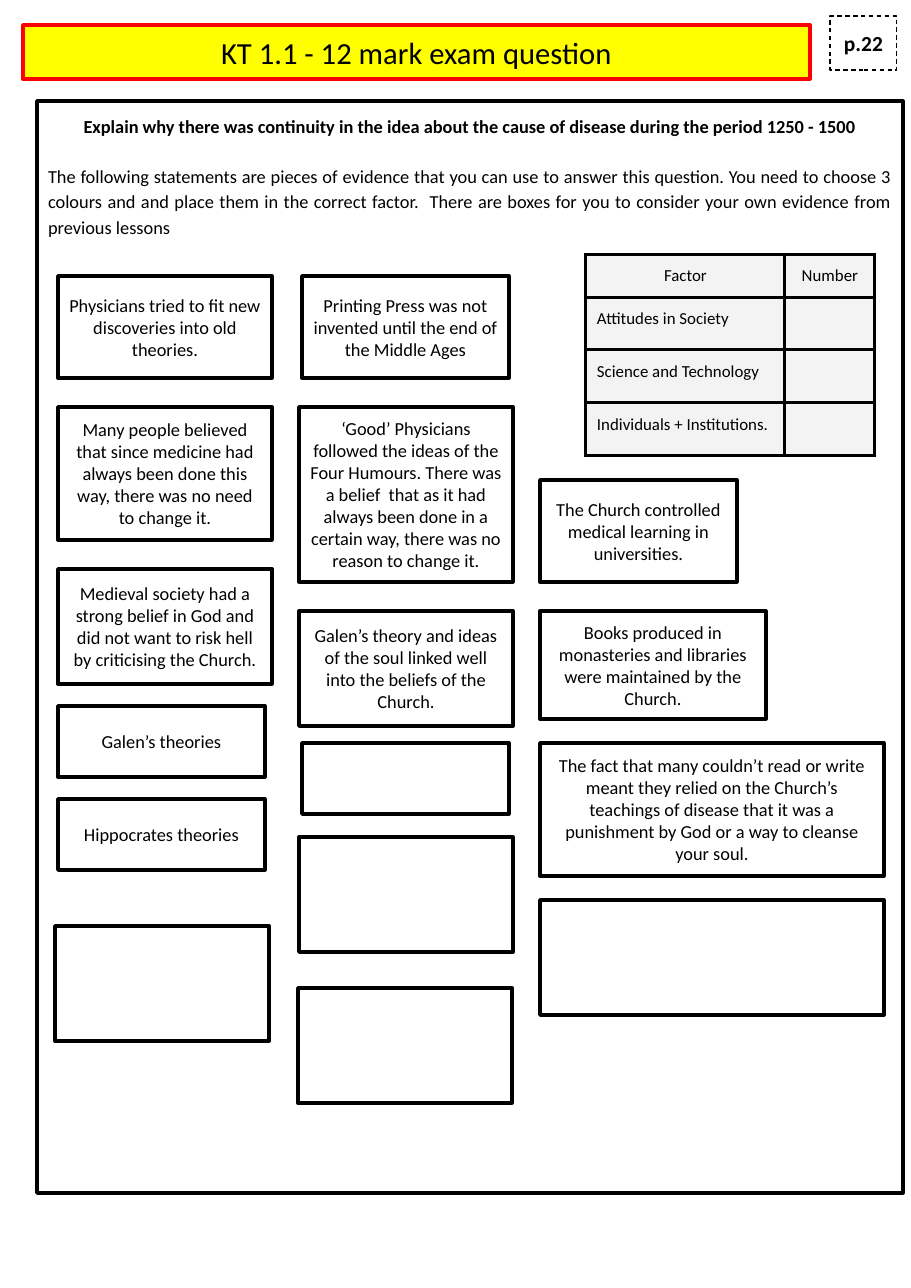
from dataclasses import dataclass

from lxml import etree
from pptx import Presentation
from pptx.dml.color import RGBColor
from pptx.enum import dml, shapes, text
from pptx.oxml import ns
from pptx.util import Pt

EMU_PER_PX = 8298
INSET = 11


@dataclass(frozen=True)
class Theme:
    font: str = "Calibri"
    ink: str = "000000"
    paper: str = "FFFFFF"
    banner: str = "FFFF00"
    banner_edge: str = "FF0000"
    cell: str = "F3F3F3"
    title_size: int = 20
    page_size: int = 14
    body_size: int = 12
    table_size: int = 11
    thick: float = 2.25
    thin: float = 0.75


THEME = Theme()
CENTER = text.PP_ALIGN.CENTER

QUESTION = ("Explain why there was continuity in the idea about the cause of disease "
            "during the period 1250 - 1500")
TASK = ("The following statements are pieces of evidence that you can use to answer this "
        "question. You need to choose 3 colours and and place them in the correct factor.  "
        "There are boxes for you to consider your own evidence from previous lessons")

# (left, top, width, height), statement; a box without a statement is for the pupil
EVIDENCE = [
    ((58, 276, 214, 102), "Physicians tried to fit new discoveries into old theories."),
    ((58, 407, 214, 133), "Many people believed that since medicine had always been done "
                          "this way, there was no need to change it."),
    ((58, 569, 214, 115), "Medieval society had a strong belief in God and did not want to "
                          "risk hell by criticising the Church."),
    ((58, 706, 207, 71), "Galen’s theories"),
    ((58, 799, 207, 71), "Hippocrates theories"),
    ((55, 926, 214, 115), ""),
    ((302, 276, 207, 102), "Printing Press was not invented until the end of the Middle Ages"),
    ((299, 407, 214, 175), "‘Good’ Physicians followed the ideas of the Four Humours. There "
                           "was a belief  that as it had always been done in a certain way, "
                           "there was no reason to change it."),
    ((299, 611, 214, 115), "Galen’s theory and ideas of the soul linked well into the "
                           "beliefs of the Church."),
    ((302, 743, 207, 71), ""),
    ((299, 837, 214, 115), ""),
    ((298, 988, 214, 115), ""),
    ((540, 480, 197, 102), "The Church controlled medical learning in universities."),
    ((540, 611, 226, 108), "Books produced in monasteries and libraries were maintained by "
                           "the Church."),
    ((540, 743, 344, 133), "The fact that many couldn’t read or write meant they relied on "
                           "the Church’s teachings of disease that it was a punishment by God "
                           "or a way to cleanse your soul."),
    ((540, 900, 344, 115), ""),
]

FACTORS = [("Factor", "Number"), ("Attitudes in Society", ""),
           ("Science and Technology", ""), ("Individuals + Institutions.", "")]
TABLE_ORIGIN = (586, 254)
COLUMN_WIDTHS = (199, 90)
ROW_HEIGHTS = (43, 53, 53, 53)


def px(length):
    return length * EMU_PER_PX


def apply(target, values):
    for name, value in values.items():
        setattr(target, name, value)


def write(paragraph, words, size, bold=False, **layout):
    apply(paragraph, layout)
    run = paragraph.add_run()
    run.text = words
    apply(run.font, {"name": THEME.font, "size": Pt(size), "bold": bold})
    run.font.color.rgb = RGBColor.from_string(THEME.ink)


def set_margins(target):
    sides = ("left", "top", "right", "bottom")
    apply(target, {f"margin_{side}": px(INSET) for side in sides})


def add_box(slide, area, fill=None, edge=THEME.ink, weight=THEME.thick,
            anchor=text.MSO_ANCHOR.MIDDLE):
    """Add an outlined rectangle and return it, ready for text."""
    box = slide.shapes.add_shape(shapes.MSO_SHAPE.RECTANGLE, *map(px, area))
    box.shadow.inherit = False
    if fill:
        box.fill.solid()
        box.fill.fore_color.rgb = RGBColor.from_string(fill)
    else:
        box.fill.background()
    box.line.color.rgb = RGBColor.from_string(edge)
    box.line.width = Pt(weight)
    set_margins(box.text_frame)
    apply(box.text_frame, {"word_wrap": True, "vertical_anchor": anchor})
    return box


def add_label(box, words, size, bold=False):
    write(box.text_frame.paragraphs[0], words, size, bold, alignment=CENTER)


def add_instructions(slide):
    panel = add_box(slide, (37, 101, 866, 1092), anchor=text.MSO_ANCHOR.TOP)
    frame = panel.text_frame
    write(frame.paragraphs[0], QUESTION, THEME.body_size, bold=True,
          alignment=CENTER, line_spacing=1.15)
    write(frame.add_paragraph(), TASK, THEME.body_size, line_spacing=1.15,
          alignment=text.PP_ALIGN.JUSTIFY, space_before=Pt(16), space_after=Pt(16))


def add_cell_borders(cell):
    properties = cell._tc.get_or_add_tcPr()
    for side in ("lnL", "lnR", "lnT", "lnB"):
        line = etree.SubElement(properties, ns.qn(f"a:{side}"), w=str(Pt(THEME.thick)))
        fill = etree.SubElement(line, ns.qn("a:solidFill"))
        etree.SubElement(fill, ns.qn("a:srgbClr"), val=THEME.ink)


def add_factor_table(slide):
    size = (sum(COLUMN_WIDTHS), sum(ROW_HEIGHTS))
    frame = slide.shapes.add_table(len(ROW_HEIGHTS), len(COLUMN_WIDTHS),
                                   *map(px, TABLE_ORIGIN + size))
    table = frame.table
    apply(table, {"first_row": False, "horz_banding": False})
    for column, width in zip(table.columns, COLUMN_WIDTHS):
        column.width = px(width)
    for row, height in zip(table.rows, ROW_HEIGHTS):
        row.height = px(height)
    for row_index, labels in enumerate(FACTORS):
        for column_index, label in enumerate(labels):
            cell = table.cell(row_index, column_index)
            add_cell_borders(cell)
            cell.fill.solid()
            cell.fill.fore_color.rgb = RGBColor.from_string(THEME.cell)
            if label:
                set_margins(cell)
                alignment = text.PP_ALIGN.LEFT if row_index else CENTER
                write(cell.text_frame.paragraphs[0], label, THEME.table_size,
                      alignment=alignment)


def main():
    presentation = Presentation()
    apply(presentation, {"slide_width": px(911), "slide_height": px(1288)})
    slide = presentation.slides.add_slide(presentation.slide_layouts[6])

    banner = add_box(slide, (23, 25, 787, 54), THEME.banner, THEME.banner_edge)
    add_label(banner, "KT 1.1 - 12 mark exam question", THEME.title_size)
    add_instructions(slide)
    add_factor_table(slide)
    for area, statement in EVIDENCE:
        box = add_box(slide, area)
        if statement:
            add_label(box, statement, THEME.body_size)

    page = add_box(slide, (830, 16, 67, 54), THEME.paper, weight=THEME.thin)
    page.line.dash_style = dml.MSO_LINE.DASH
    add_label(page, "p.22", THEME.page_size, bold=True)

    presentation.save("out.pptx")


if __name__ == "__main__":
    main()
